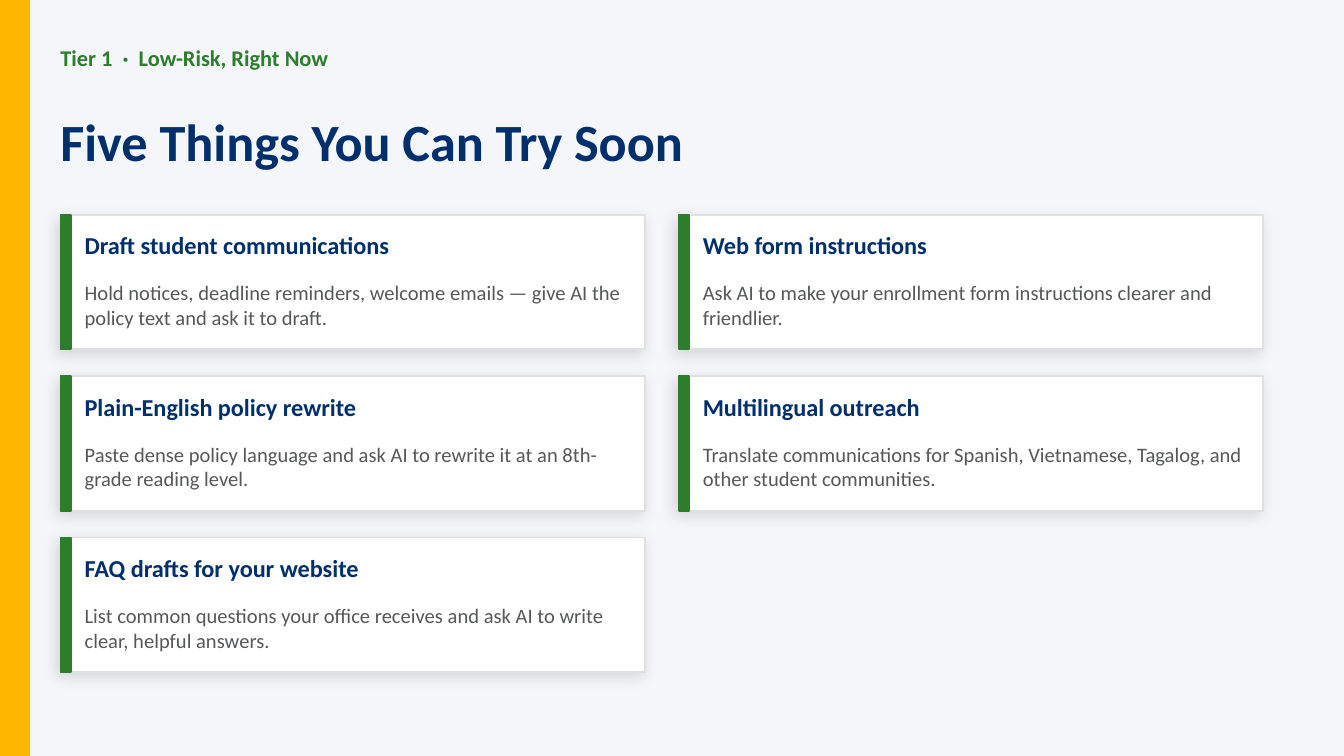
from lxml import etree
from pptx import Presentation
from pptx.dml.color import RGBColor
from pptx.enum.shapes import MSO_SHAPE
from pptx.enum.text import MSO_ANCHOR, MSO_AUTO_SIZE, PP_ALIGN
from pptx.oxml.ns import qn
from pptx.util import Inches, Pt

RECT = MSO_SHAPE.RECTANGLE
MIDDLE = MSO_ANCHOR.MIDDLE
FIXED = MSO_AUTO_SIZE.NONE
LEFT = PP_ALIGN.LEFT

FONT = "Calibri"
NAVY, GREEN, GOLD, GRAY = "002F6D", "2D7D2D", "FFB600", "555759"
WHITE, EDGE, BACK = "FFFFFF", "E0E0E0", "F4F6F9"

WIDTH = 10
HEIGHT = WIDTH * 9 / 16
MARGIN, TOP = 0.45, 1.6
COL_STEP, ROW_STEP, ROWS = 4.6, 1.2, 3
CARD_W, CARD_H = 4.35, 1

CARDS = [
    ("Draft student communications",
     "Hold notices, deadline reminders, welcome emails — give AI the "
     "policy text and ask it to draft."),
    ("Plain-English policy rewrite",
     "Paste dense policy language and ask AI to rewrite it at an "
     "8th-grade reading level."),
    ("FAQ drafts for your website",
     "List common questions your office receives and ask AI to write "
     "clear, helpful answers."),
    ("Web form instructions",
     "Ask AI to make your enrollment form instructions clearer and "
     "friendlier."),
    ("Multilingual outreach",
     "Translate communications for Spanish, Vietnamese, Tagalog, and "
     "other student communities."),
]


def color(code):
    return RGBColor.from_string(code)


def add_rect(slide, box, fill, edge):
    rect = slide.shapes.add_shape(RECT, *map(Inches, box))
    rect.shadow.inherit = False
    rect.fill.solid()
    rect.fill.fore_color.rgb = color(fill)
    rect.line.color.rgb = color(edge)
    rect.line.width = Pt(1)
    return rect


def add_shadow(shape):
    """Put a soft black shadow at the lower left of the shape."""
    effects = shape._element.spPr.find(qn("a:effectLst"))
    outer = etree.SubElement(
        effects, qn("a:outerShdw"), blurRad=str(Pt(8)), dist=str(Pt(3)),
        dir=str(135 * 60000), algn="bl", rotWithShape="0")
    tint = etree.SubElement(outer, qn("a:srgbClr"), val="000000")
    etree.SubElement(tint, qn("a:alpha"), val="12000")


def set_text(shape, text, size, code, bold):
    frame = shape.text_frame
    frame.text = text
    frame.word_wrap = True
    frame.auto_size = FIXED
    frame.vertical_anchor = MIDDLE
    frame.margin_left = frame.margin_right = 0
    frame.margin_top = frame.margin_bottom = 0
    para = frame.paragraphs[0]
    para.alignment = LEFT
    para.font.name = FONT
    para.font.size = Pt(size)
    para.font.bold = bold
    para.font.color.rgb = color(code)


def add_text(slide, box, text, size, code, bold=False):
    shape = slide.shapes.add_textbox(*map(Inches, box))
    set_text(shape, text, size, code, bold)


def add_title(slide, box, text):
    title = slide.shapes.title
    title.left, title.top, title.width, title.height = map(Inches, box)
    set_text(title, text, 28, NAVY, True)


def add_card(slide, left, top, head, body):
    card = add_rect(slide, (left, top, CARD_W, CARD_H), WHITE, EDGE)
    add_shadow(card)
    add_rect(slide, (left, top, 0.08, CARD_H), GREEN, GREEN)
    inner = left + 0.18
    add_text(slide, (inner, top + 0.05, 4.1, 0.35), head, 13, NAVY, True)
    add_text(slide, (inner, top + 0.42, 4.1, 0.5), body, 11, GRAY)


def main():
    deck = Presentation()
    deck.slide_width, deck.slide_height = Inches(WIDTH), Inches(HEIGHT)
    slide = deck.slides.add_slide(deck.slide_layouts.get_by_name("Title Only"))
    slide.background.fill.solid()
    slide.background.fill.fore_color.rgb = color(BACK)

    add_rect(slide, (0, 0, 0.22, HEIGHT), GOLD, GOLD)
    add_text(slide, (MARGIN, 0.2, 9, 0.45),
             "Tier 1  ·  Low-Risk, Right Now", 12, GREEN, True)
    add_title(slide, (MARGIN, 0.72, 9, 0.65), "Five Things You Can Try Soon")
    for i, (head, body) in enumerate(CARDS):
        col, row = divmod(i, ROWS)
        add_card(slide, MARGIN + col * COL_STEP, TOP + row * ROW_STEP,
                 head, body)
    deck.save("out.pptx")


if __name__ == "__main__":
    main()
